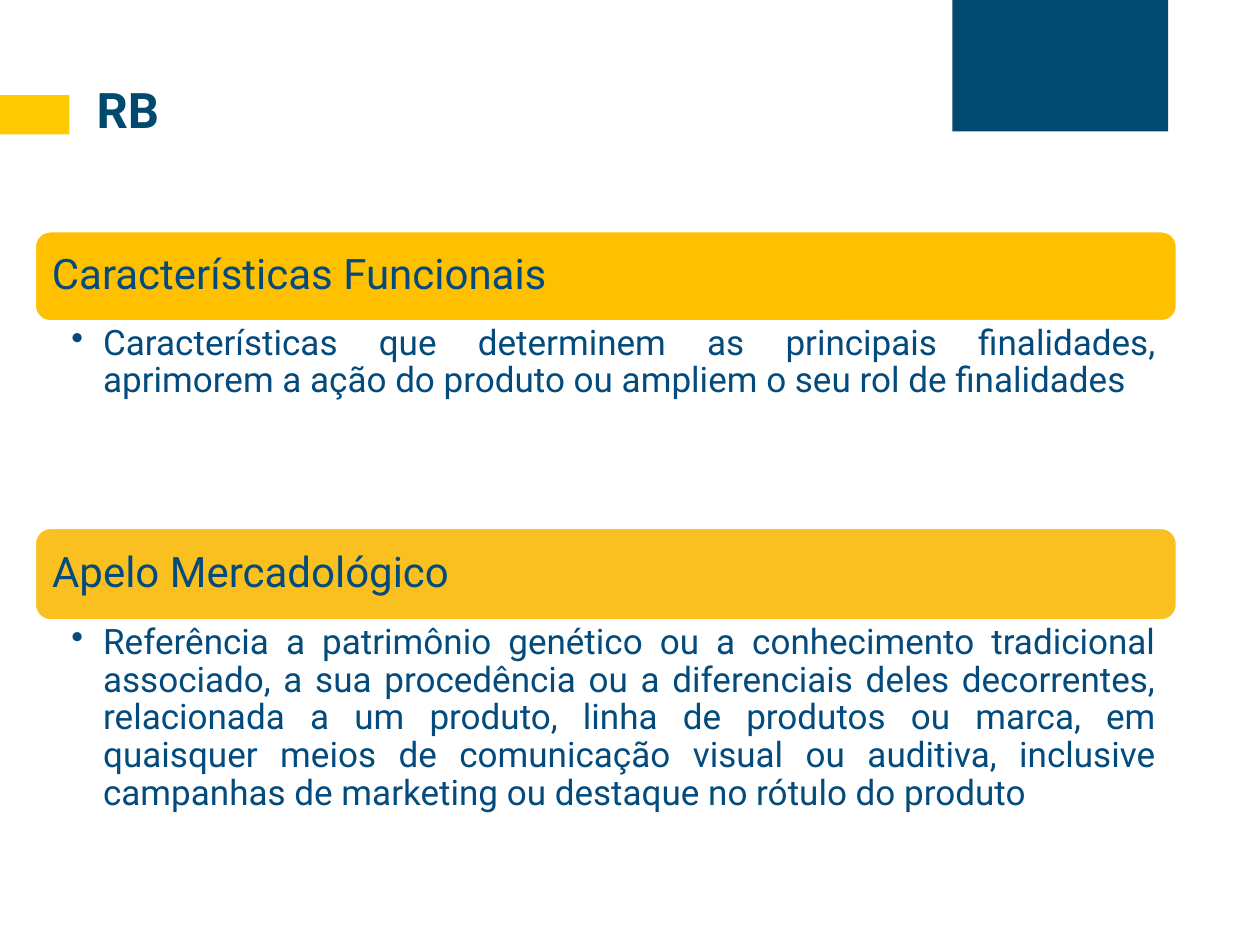
from lxml import etree
from pptx import Presentation
from pptx.dml.color import RGBColor
from pptx.enum.shapes import MSO_SHAPE as Shape
from pptx.enum.text import MSO_ANCHOR as Anchor, PP_ALIGN as Align
from pptx.oxml.ns import qn
from pptx.util import Cm, Pt

COLORS = {
    "navy": "01496E",
    "text": "034A7D",
    "accent": "FFCB00",
    "functional": "FFC000",
    "market": "F9C01F",
    "white": "FFFFFF",
}


def write(frame, text, *, size, color="text", bold=False, align=Align.LEFT,
          anchor=Anchor.TOP, insets=(0.25, 0.13, 0.25, 0.13),
          spacing=1.0, bullet=False):
    frame.word_wrap = True
    frame.vertical_anchor = anchor
    (frame.margin_left, frame.margin_top,
     frame.margin_right, frame.margin_bottom) = map(Cm, insets)
    paragraph = frame.paragraphs[0]
    paragraph.alignment = align
    paragraph.line_spacing = spacing
    if bullet:
        properties = paragraph._p.get_or_add_pPr()
        properties.set("marL", str(Cm(0.64)))
        properties.set("indent", str(-Cm(0.64)))
        etree.SubElement(properties, qn("a:buChar")).set("char", "•")
    run = paragraph.add_run()
    run.text = text
    run.font.name = "Roboto"
    run.font.size = Pt(size)
    run.font.bold = bold
    run.font.color.rgb = RGBColor.from_string(COLORS[color])


def add_block(kind, left, top, width, height, color):
    block = slide.shapes.add_shape(kind, Cm(left), Cm(top), Cm(width), Cm(height))
    block.shadow.inherit = False
    block.fill.solid()
    block.fill.fore_color.rgb = RGBColor.from_string(COLORS[color])
    block.line.fill.background()
    return block


deck = Presentation()
deck.slide_width, deck.slide_height = Cm(25.4), Cm(19.05)
slide = deck.slides.add_slide(deck.slide_layouts[5])

# Corner decorations
add_block(Shape.RECTANGLE, 0, 1.92, 1.4, 0.79, "accent")
add_block(Shape.RECTANGLE, 19.2, 0, 4.35, 2.65, "navy")

# Title
title = slide.shapes.title
title.left, title.top, title.width, title.height = Cm(1.7), Cm(1.47), Cm(21), Cm(1.45)
write(title.text_frame, "RB", size=28, color="navy", bold=True, anchor=Anchor.MIDDLE)

# Sections: a heading band with its definition right below
SECTION_LEFT, SECTION_WIDTH = 0.71, 23.01
sections = [
    ("Características Funcionais", "functional", 4.67, 1.8, 4.19,
     "Características que determinem as principais finalidades, aprimorem a ação "
     "do produto ou ampliem o seu rol de finalidades"),
    ("Apelo Mercadológico", "market", 10.65, 1.85, 4.5,
     "Referência a patrimônio genético ou a conhecimento tradicional associado, "
     "a sua procedência ou a diferenciais deles decorrentes, relacionada a um "
     "produto, linha de produtos ou marca, em quaisquer meios de comunicação "
     "visual ou auditiva, inclusive campanhas de marketing ou destaque no rótulo "
     "do produto"),
]
for heading, color, top, band_height, body_height, definition in sections:
    band = add_block(Shape.ROUNDED_RECTANGLE, SECTION_LEFT, top,
                     SECTION_WIDTH, band_height, color)
    band.line.color.rgb = RGBColor.from_string(COLORS["white"])
    band.line.width = Pt(1)
    write(band.text_frame, heading, size=24, anchor=Anchor.MIDDLE,
          insets=(0.25, 0.25, 0.25, 0.25), spacing=0.9)

    body = slide.shapes.add_textbox(Cm(SECTION_LEFT), Cm(top + band_height),
                                    Cm(SECTION_WIDTH), Cm(body_height))
    write(body.text_frame, definition, size=20, align=Align.JUSTIFY,
          insets=(0.73, 0.08, 0.41, 0.08), spacing=0.9, bullet=True)

deck.save("out.pptx")
